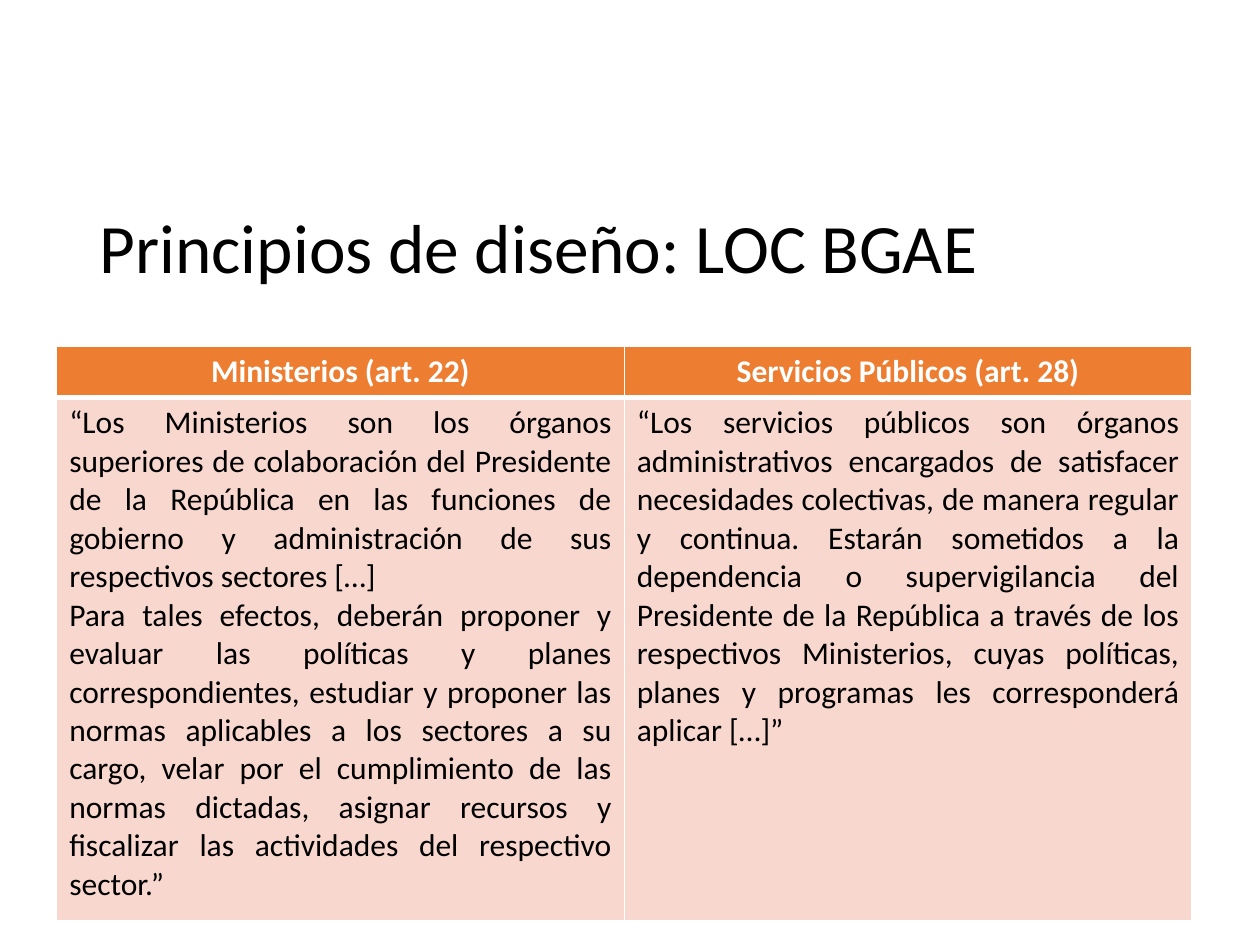
from lxml import etree
from pptx import Presentation
from pptx.dml.color import RGBColor
from pptx.enum.text import MSO_ANCHOR, PP_ALIGN
from pptx.oxml.ns import qn
from pptx.util import Inches, Pt

LEFT, CENTER, JUSTIFY = PP_ALIGN.LEFT, PP_ALIGN.CENTER, PP_ALIGN.JUSTIFY
MIDDLE = MSO_ANCHOR.MIDDLE

BLACK = RGBColor(0x00, 0x00, 0x00)
WHITE = RGBColor(0xFF, 0xFF, 0xFF)
ORANGE = RGBColor(0xED, 0x7D, 0x31)
PEACH = RGBColor(0xF8, 0xD7, 0xCE)

TITLE = "Principios de diseño: LOC BGAE"
ARTICLES = [
    (
        "Ministerios (art. 22)",
        [
            "“Los Ministerios son los órganos superiores de colaboración del "
            "Presidente de la República en las funciones de gobierno y "
            "administración de sus respectivos sectores […]",
            "Para tales efectos, deberán proponer y evaluar las políticas y "
            "planes correspondientes, estudiar y proponer las normas aplicables "
            "a los sectores a su cargo, velar por el cumplimiento de las normas "
            "dictadas, asignar recursos y fiscalizar las actividades del "
            "respectivo sector.”",
        ],
    ),
    (
        "Servicios Públicos (art. 28)",
        [
            "“Los servicios públicos son órganos administrativos encargados de "
            "satisfacer necesidades colectivas, de manera regular y continua. "
            "Estarán sometidos a la dependencia o supervigilancia del Presidente "
            "de la República a través de los respectivos Ministerios, cuyas "
            "políticas, planes y programas les corresponderá aplicar […]”",
        ],
    ),
]


def write(frame, paragraphs, size=18, color=BLACK, bold=False, align=LEFT, spacing=None):
    for index, text in enumerate(paragraphs):
        paragraph = frame.paragraphs[0] if index == 0 else frame.add_paragraph()
        paragraph.alignment = align
        paragraph.line_spacing = spacing
        run = paragraph.add_run()
        run.text = text
        run.font.name = "Calibri"
        run.font.size = Pt(size)
        run.font.bold = bold
        run.font.color.rgb = color


class SlideBuilder:
    header_style = {"color": WHITE, "bold": True, "align": CENTER}
    body_style = {"align": JUSTIFY}

    def __init__(self, slide):
        self.slide = slide

    def title(self, text, left, top, width, height):
        heading = self.slide.shapes.title
        heading.left, heading.top = Inches(left), Inches(top)
        heading.width, heading.height = Inches(width), Inches(height)
        heading.text_frame.vertical_anchor = MIDDLE
        write(heading.text_frame, [text], size=39.6, spacing=0.9)

    def borders(self, cell, bottom):
        properties = cell._tc.get_or_add_tcPr()
        for side, points in (("L", 1), ("R", 1), ("T", 1), ("B", bottom)):
            line = etree.SubElement(properties, qn(f"a:ln{side}"), w=str(Pt(points)))
            fill = etree.SubElement(line, qn("a:solidFill"))
            etree.SubElement(fill, qn("a:srgbClr"), val=str(WHITE))

    def cell(self, cell, paragraphs, fill, style, bottom=1):
        self.borders(cell, bottom)
        cell.fill.solid()
        cell.fill.fore_color.rgb = fill
        write(cell.text_frame, paragraphs, **style)

    def comparison(self, articles, left, top, width, row_heights):
        table = self.slide.shapes.add_table(
            len(row_heights), len(articles), Inches(left), Inches(top),
            Inches(width), Inches(sum(row_heights)),
        ).table
        for row, height in zip(table.rows, row_heights):
            row.height = Inches(height)
        for column, (heading, body) in enumerate(articles):
            self.cell(table.cell(0, column), [heading], ORANGE, self.header_style, bottom=3)
            self.cell(table.cell(1, column), body, PEACH, self.body_style)


def main():
    presentation = Presentation()
    presentation.slide_width = Inches(10)
    presentation.slide_height = Inches(7.5)
    title_only = presentation.slide_layouts[5]
    builder = SlideBuilder(presentation.slides.add_slide(title_only))
    builder.title(TITLE, 0.69, 1.62, 8.62, 0.74)
    builder.comparison(ARTICLES, 0.45, 2.75, 9.01, [0.4, 4.15])
    presentation.save("out.pptx")


if __name__ == "__main__":
    main()
